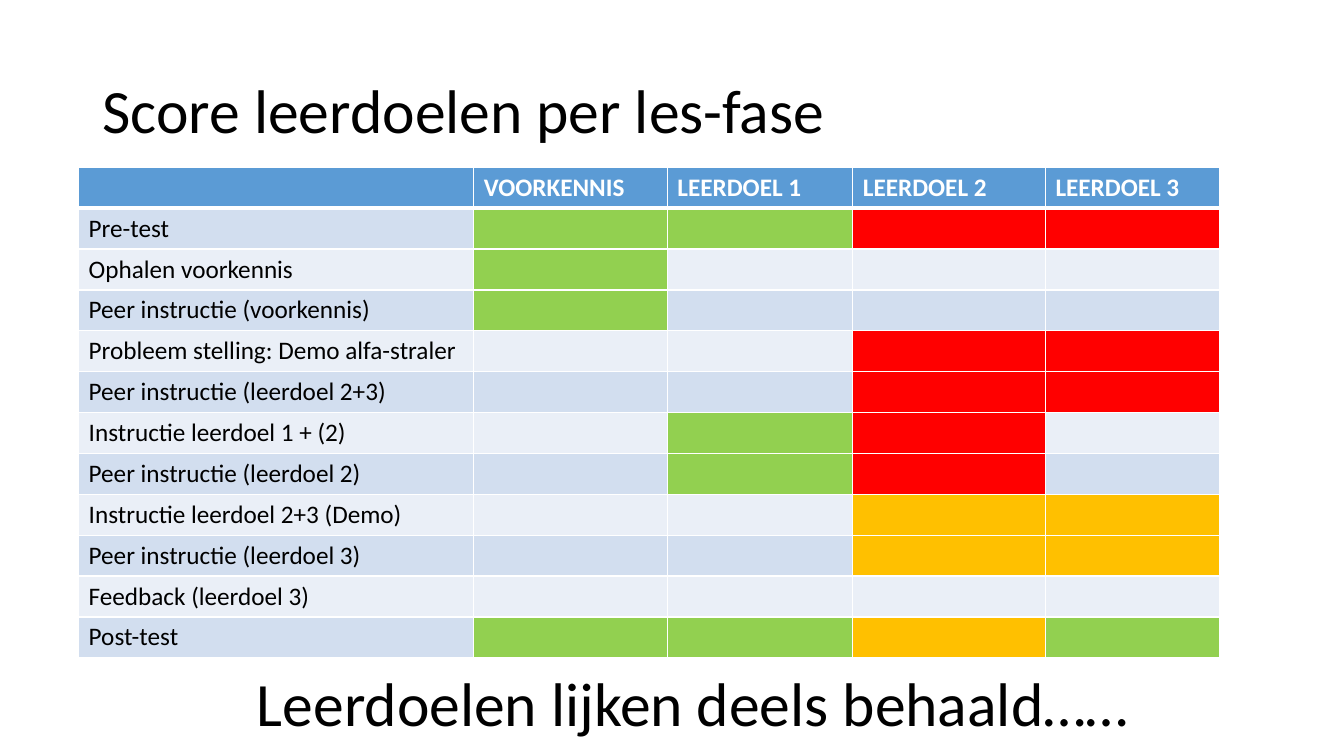
from lxml import etree
from pptx import Presentation
from pptx.dml.color import RGBColor
from pptx.enum.text import MSO_ANCHOR
from pptx.oxml.ns import qn
from pptx.util import Inches, Pt

MIDDLE = MSO_ANCHOR.MIDDLE
BLACK = RGBColor(0x00, 0x00, 0x00)
WHITE = RGBColor(0xFF, 0xFF, 0xFF)
HEADER_BLUE = RGBColor(0x5B, 0x9B, 0xD5)
BANDS = [RGBColor(0xD2, 0xDE, 0xEF), RGBColor(0xEA, 0xEF, 0xF7)]
SCORES = {
    "G": RGBColor(0x92, 0xD0, 0x50),
    "O": RGBColor(0xFF, 0xC0, 0x00),
    "R": RGBColor(0xFF, 0x00, 0x00),
}

HEADERS = ["", "VOORKENNIS", "LEERDOEL 1", "LEERDOEL 2", "LEERDOEL 3"]
COLUMN_WIDTHS = [3.92, 1.92, 1.84, 1.91, 1.73]
# Each phase has one score letter per goal; a dash means not scored.
PHASES = [
    ("Pre-test", "GGRR"),
    ("Ophalen voorkennis", "G---"),
    ("Peer instructie (voorkennis)", "G---"),
    ("Probleem stelling: Demo alfa-straler", "--RR"),
    ("Peer instructie (leerdoel 2+3)", "--RR"),
    ("Instructie leerdoel 1 + (2)", "-GR-"),
    ("Peer instructie (leerdoel 2)", "-GR-"),
    ("Instructie leerdoel 2+3 (Demo)", "--OO"),
    ("Peer instructie (leerdoel 3)", "--OO"),
    ("Feedback (leerdoel 3)", "----"),
    ("Post-test", "GGOG"),
]


def write(para, text, size, color, bold=False):
    span = para.add_run()
    span.text = text
    span.font.color.rgb = color
    font_format = {"name": "Calibri", "size": Pt(size), "bold": bold}
    for name, value in font_format.items():
        setattr(span.font, name, value)


def style_cell(cell, color, bottom_width=1):
    """Give the cell white borders and a solid fill."""
    properties = cell._tc.get_or_add_tcPr()
    for side, width in {"L": 1, "R": 1, "T": 1, "B": bottom_width}.items():
        line = etree.SubElement(properties, qn(f"a:ln{side}"), w=str(Pt(width)))
        fill = etree.SubElement(line, qn("a:solidFill"))
        etree.SubElement(fill, qn("a:srgbClr"), val=str(WHITE))
    cell.fill.solid()
    cell.fill.fore_color.rgb = color


deck = Presentation()
deck.slide_width = Inches(13.33)
deck.slide_height = Inches(7.5)
page = deck.slides.add_slide(deck.slide_layouts[6])

# Score table
table = page.shapes.add_table(
    len(PHASES) + 1, len(HEADERS),
    Inches(0.78), Inches(1.66), Inches(11.31), Inches(4.87),
).table
for column, width in zip(table.columns, COLUMN_WIDTHS):
    column.width = Inches(width)

for index, header in enumerate(HEADERS):
    cell = table.cell(0, index)
    style_cell(cell, HEADER_BLUE, bottom_width=3)
    if header:
        write(cell.text_frame.paragraphs[0], header, 18, WHITE, bold=True)

for row, (phase, scores) in enumerate(PHASES, start=1):
    band = BANDS[(row - 1) % 2]
    label = table.cell(row, 0)
    style_cell(label, band)
    write(label.text_frame.paragraphs[0], phase, 18, BLACK)
    for column, score in enumerate(scores, start=1):
        style_cell(table.cell(row, column), SCORES.get(score, band))

# Title and conclusion
for text, left, top in [
    ("Score leerdoelen per les-fase", 0.92, 0.4),
    ("Leerdoelen lijken deels behaald……", 2.45, 6.28),
]:
    box = page.shapes.add_textbox(
        Inches(left), Inches(top), Inches(11.5), Inches(1.45)
    )
    frame = box.text_frame
    frame.word_wrap = True
    frame.vertical_anchor = MIDDLE
    para = frame.paragraphs[0]
    para.line_spacing = 0.9
    write(para, text, 44, BLACK)

deck.save("out.pptx")
